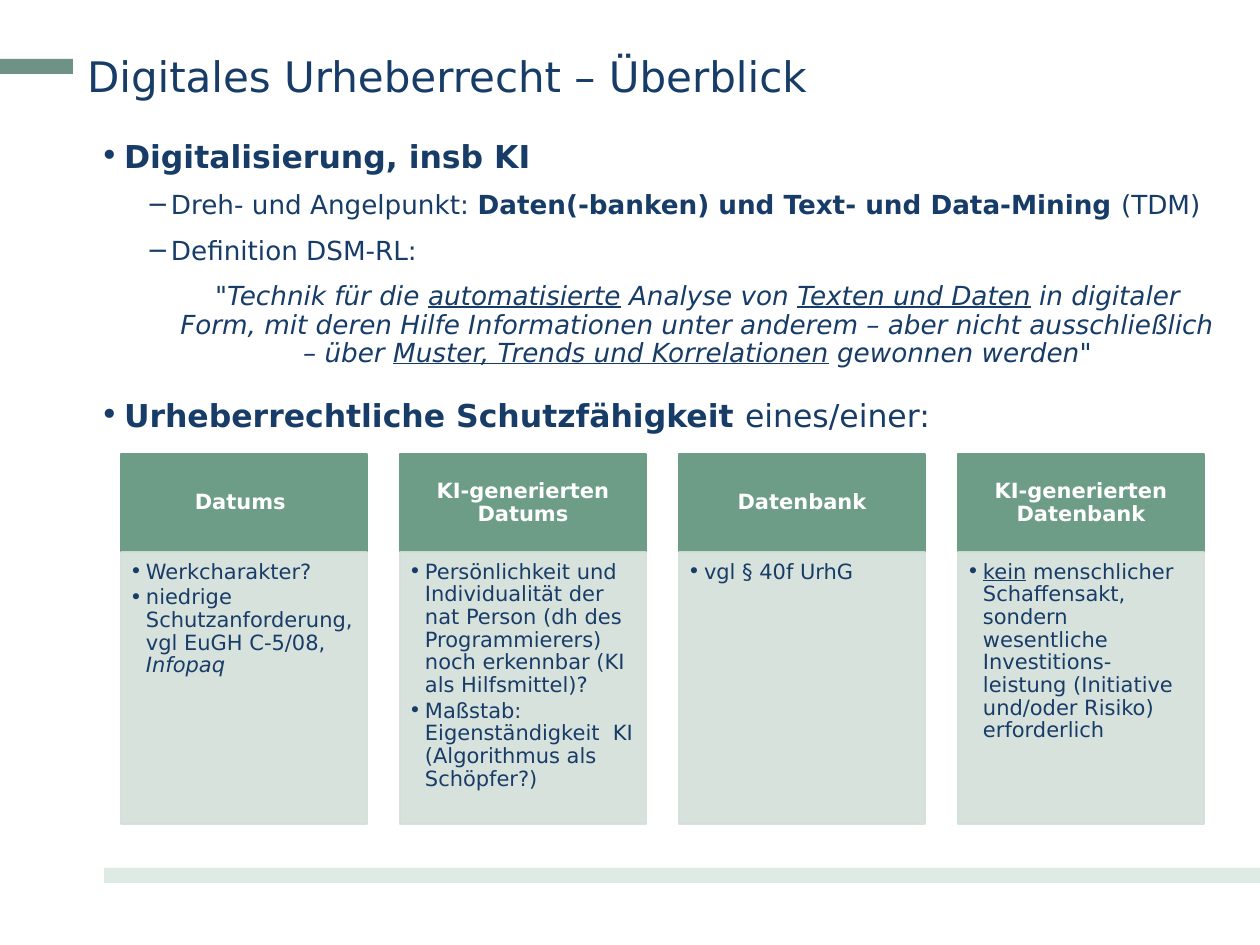
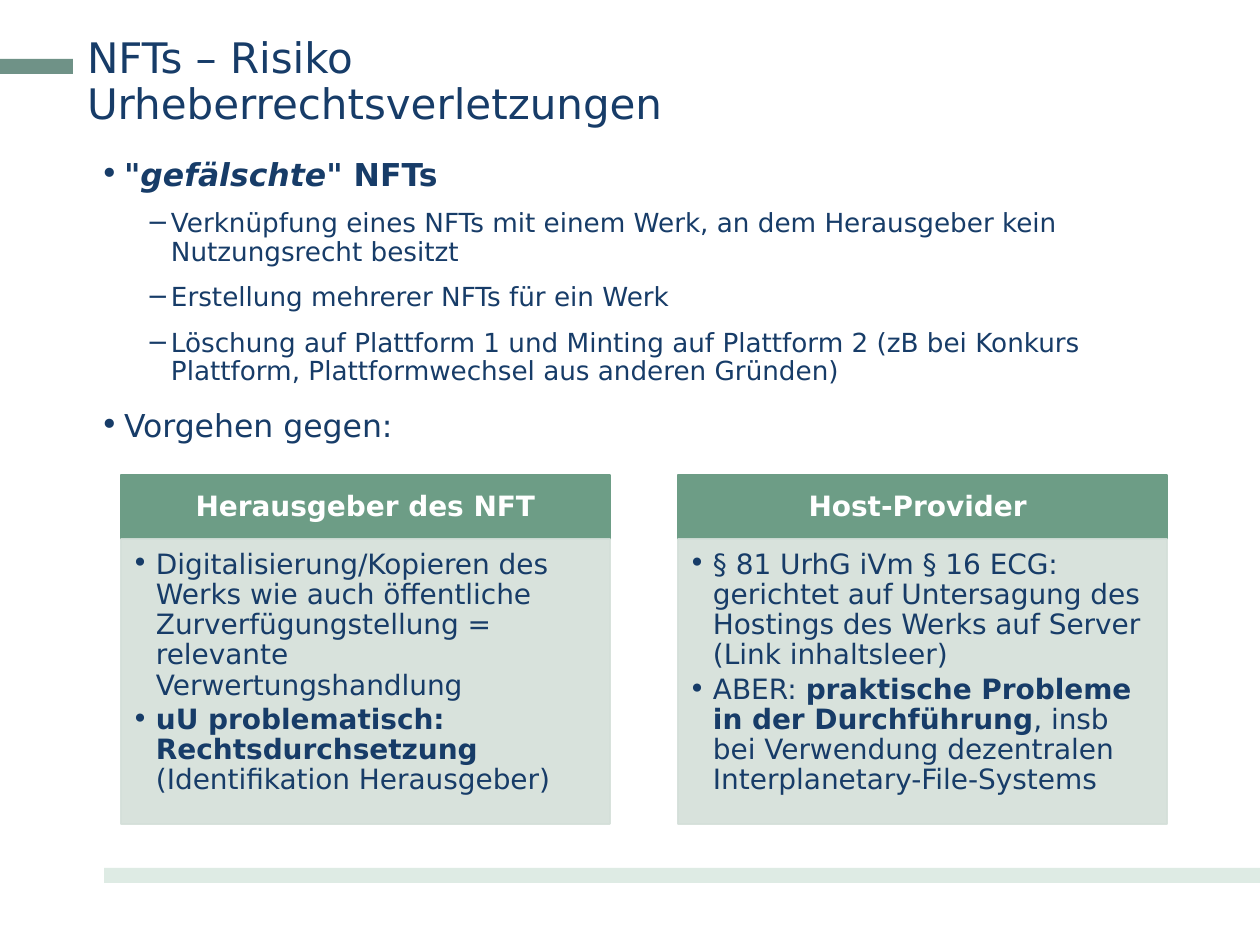
from lxml.etree import SubElement
from pptx import Presentation
from pptx.dml.color import RGBColor
from pptx.enum.shapes import MSO_SHAPE as Preset
from pptx.enum.text import MSO_ANCHOR as Anchor, MSO_AUTO_SIZE as AutoSize, PP_ALIGN as Align
from pptx.oxml.ns import qn
from pptx.util import Emu, Pt

EMU_PER_PX = 914400 / 126
FONT = "DejaVu Sans"
NAVY = RGBColor(0x17, 0x3C, 0x68)
WHITE = RGBColor(0xFF, 0xFF, 0xFF)
ACCENT = RGBColor(0x6F, 0x92, 0x87)
FOOTER_BAND = RGBColor(0xDE, 0xEB, 0xE4)
HEADING_GREEN = RGBColor(0x6D, 0x9D, 0x86)
PANEL_GREEN = RGBColor(0xD4, 0xDF, 0xD9)

STYLE_NAMES = {"b": "bold", "i": "italic", "u": "underline"}
TITLE = {"size": 24}
TOPIC = {"size": 18, "margin": 24, "hanging": 24, "bullet": "•", "before": 7.5, "after": 6}
POINT = {"size": 15, "level": 1, "margin": 71, "hanging": 24, "bullet": "−",
         "before": 3.8, "after": 6}
QUOTE = {**POINT, "margin": 74, "hanging": 0, "bullet": None, "align": Align.CENTER}
LAST_TOPIC = {**TOPIC, "before": 12, "after": 0}

OVERVIEW_GRID = {"left": 121, "top": 454, "width": 246, "pitch": 279, "heading_height": 98,
                 "panel_height": 272, "size": 12, "indent": 16,
                 "heading_insets": (11, 6, 11, 6), "panel_insets": (9, 9, 11, 13)}
ACTION_GRID = {"left": 121, "top": 475, "width": 489, "pitch": 557, "heading_height": 64,
               "panel_height": 285, "size": 16, "indent": 24,
               "heading_insets": (15, 9, 15, 9), "panel_insets": (11, 11, 15, 18)}

OVERVIEW_BODY = [
    (TOPIC, [("Digitalisierung, insb KI", "b")]),
    (POINT, [("Dreh- und Angelpunkt: ", ""),
             ("Daten(-banken) und Text- und Data-Mining ", "b"), ("(TDM)", "")]),
    (POINT, [("Definition DSM-RL:", "")]),
    (QUOTE, [('"', ""), ("Technik für die ", "i"), ("automatisierte", "iu"),
             (" Analyse von ", "i"), ("Texten und Daten", "iu"),
             (" in digitaler Form, mit deren Hilfe Informationen unter anderem – "
              "aber nicht ausschließlich – über ", "i"),
             ("Muster, Trends und Korrelationen", "iu"),
             (" gewonnen werden", "i"), ('"', "")]),
    (LAST_TOPIC, [("Urheberrechtliche Schutzfähigkeit ", "b"), ("eines/einer:", "")]),
]
OVERVIEW_COLUMNS = [
    ("Datums ", [
        [("Werkcharakter?", "")],
        [("niedrige Schutzanforderung, vgl EuGH C-5/08, ", ""), ("Infopaq", "i")]]),
    ("KI-generierten Datums", [
        [("Persönlichkeit und Individualität der nat Person (dh des Programmierers) "
          "noch erkennbar (KI als Hilfsmittel)?", "")],
        [("Maßstab: Eigenständigkeit  KI (Algorithmus als Schöpfer?)", "")]]),
    ("Datenbank", [[("vgl § 40f UrhG", "")]]),
    ("KI-generierten Datenbank", [
        [("kein", "u"), (" menschlicher Schaffensakt, sondern wesentliche "
                         "Investitions-leistung (Initiative und/oder Risiko) "
                         "erforderlich", "")]]),
]
NFT_BODY = [
    (TOPIC, [('"', "b"), ("gefälschte", "bi"), ('" NFTs', "b")]),
    (POINT, [("Verknüpfung eines NFTs mit einem Werk, an dem Herausgeber kein "
              "Nutzungsrecht besitzt", "")]),
    (POINT, [("Erstellung mehrerer NFTs für ein Werk", "")]),
    (POINT, [("Löschung auf Plattform 1 und Minting auf Plattform 2 (zB bei Konkurs "
              "Plattform, Plattformwechsel aus anderen Gründen)", "")]),
    (TOPIC, [("Vorgehen gegen:", "")]),
]
NFT_COLUMNS = [
    ("Herausgeber des NFT", [
        [("Digitalisierung/Kopieren des Werks wie auch öffentliche "
          "Zurverfügungstellung = relevante Verwertungshandlung", "")],
        [("uU problematisch: Rechtsdurchsetzung ", "b"),
         ("(Identifikation Herausgeber)", "")]]),
    ("Host-Provider ", [
        [("§ 81 UrhG iVm § 16 ECG: gerichtet auf Untersagung des Hostings des Werks "
          "auf Server (Link inhaltsleer)", "")],
        [("ABER: ", ""), ("praktische Probleme in der Durchführung", "b"),
         (", insb bei Verwendung dezentralen Interplanetary-File-Systems", "")]]),
]


def px(length):
    """Turn pixels into EMU."""
    return Emu(round(length * EMU_PER_PX))


def set_all(target, values):
    """Set each attribute named in a dict of format values."""
    for name, value in values.items():
        setattr(target, name, value)


def place(shape, box):
    """Move and size a shape by left, top, width and height."""
    set_all(shape, dict(zip(("left", "top", "width", "height"), map(px, box))))


def set_frame(frame, insets, anchor):
    """Give a text frame its insets, anchor and wrapping."""
    margins = ("margin_left", "margin_top", "margin_right", "margin_bottom")
    set_all(frame, {"word_wrap": True, "auto_size": AutoSize.NONE, "vertical_anchor": anchor,
                    **dict(zip(margins, map(px, insets)))})


def format_paragraph(paragraph, style):
    """Set level, spacing, indents and bullet of a paragraph."""
    set_all(paragraph, {"level": style.get("level", 0), "line_spacing": 0.9,
                        "alignment": style.get("align", Align.LEFT),
                        "space_before": Pt(style.get("before", 0)),
                        "space_after": Pt(style.get("after", 0))})
    properties = paragraph._p.get_or_add_pPr()
    properties.set("marL", str(px(style.get("margin", 0))))
    properties.set("indent", str(-px(style.get("hanging", 0))))
    if style.get("bullet"):
        SubElement(properties, qn("a:buFont"), typeface=FONT)
        SubElement(properties, qn("a:buChar"), char=style["bullet"])
    else:
        SubElement(properties, qn("a:buNone"))


def write_runs(paragraph, runs, size, color=NAVY):
    """Append runs whose marks choose bold, italic and underline."""
    for text, marks in runs:
        run = paragraph.add_run()
        run.text = text
        set_all(run.font, {"name": FONT, "size": Pt(size),
                           **{name: mark in marks for mark, name in STYLE_NAMES.items()}})
        run.font.color.rgb = color


def write_frame(frame, paragraphs, color=NAVY):
    """Fill a frame with pairs of style and runs."""
    for index, (style, runs) in enumerate(paragraphs):
        paragraph = frame.add_paragraph() if index else frame.paragraphs[0]
        format_paragraph(paragraph, style if index else {**style, "before": 0})
        write_runs(paragraph, runs, style["size"], color)


def write_title(paragraph, lines):
    """Write title lines with breaks between them."""
    format_paragraph(paragraph, TITLE)
    for index, line in enumerate(lines):
        if index:
            paragraph.add_line_break()
        write_runs(paragraph, [(line, "")], TITLE["size"])


def add_block(slide, box, color, outlined=False, opacity=100):
    """Add a flat rectangle, optionally outlined and translucent."""
    block = slide.shapes.add_shape(Preset.RECTANGLE, *map(px, box))
    block.shadow.inherit = False
    block.fill.solid()
    block.fill.fore_color.rgb = color
    if outlined:
        block.line.color.rgb = color
        block.line.width = Pt(1)
    else:
        block.line.fill.background()
    if opacity < 100:
        for color_node in block.element.spPr.iter(qn("a:srgbClr")):
            SubElement(color_node, qn("a:alpha"), val=str(opacity * 1000))
    return block


def add_bands(slide):
    """Draw the accent bar and the footer band."""
    add_block(slide, (0, 59, 73, 15), ACCENT)
    add_block(slide, (104, 868, 1156, 15), FOOTER_BAND)


def add_content_slide(presentation, title, title_box, body, body_box):
    """Add a slide with bands, title and bulleted body."""
    slide = presentation.slides.add_slide(presentation.slide_layouts[1])
    add_bands(slide)
    heading, content = slide.placeholders
    place(heading, title_box)
    set_frame(heading.text_frame, (0, 0, 0, 0), Anchor.MIDDLE)
    write_title(heading.text_frame.paragraphs[0], title)
    place(content, body_box)
    set_frame(content.text_frame, (13, 6, 13, 6), Anchor.TOP)
    write_frame(content.text_frame, body)
    return slide


def add_columns(slide, columns, grid):
    """Draw headed panels at equal steps."""
    size = grid["size"]
    heading_style = {"size": size, "align": Align.CENTER}
    point_style = {"size": size, "level": 1, "margin": grid["indent"],
                   "hanging": grid["indent"], "bullet": "•", "after": size * 0.15}
    panel_top = grid["top"] + grid["heading_height"]
    for index, (title, points) in enumerate(columns):
        left = grid["left"] + index * grid["pitch"]
        heading = add_block(slide, (left, grid["top"], grid["width"], grid["heading_height"]),
                            HEADING_GREEN, outlined=True)
        set_frame(heading.text_frame, grid["heading_insets"], Anchor.MIDDLE)
        write_frame(heading.text_frame, [(heading_style, [(title, "b")])], WHITE)
        panel = add_block(slide, (left, panel_top, grid["width"], grid["panel_height"]),
                          PANEL_GREEN, outlined=True, opacity=90)
        set_frame(panel.text_frame, grid["panel_insets"], Anchor.TOP)
        write_frame(panel.text_frame, [(point_style, runs) for runs in points])


def main():
    """Build both slides and save them."""
    presentation = Presentation()
    set_all(presentation, {"slide_width": px(1260), "slide_height": px(945)})
    overview = add_content_slide(presentation, ["Digitales Urheberrecht – Überblick"],
                                 (87, 56, 1070, 45), OVERVIEW_BODY, (87, 135, 1147, 735))
    add_columns(overview, OVERVIEW_COLUMNS, OVERVIEW_GRID)
    nft_risks = add_content_slide(presentation, ["NFTs – Risiko", "Urheberrechtsverletzungen"],
                                  (87, 37, 1070, 92), NFT_BODY, (87, 153, 1086, 678))
    add_columns(nft_risks, NFT_COLUMNS, ACTION_GRID)
    presentation.save("out.pptx")


if __name__ == "__main__":
    main()
